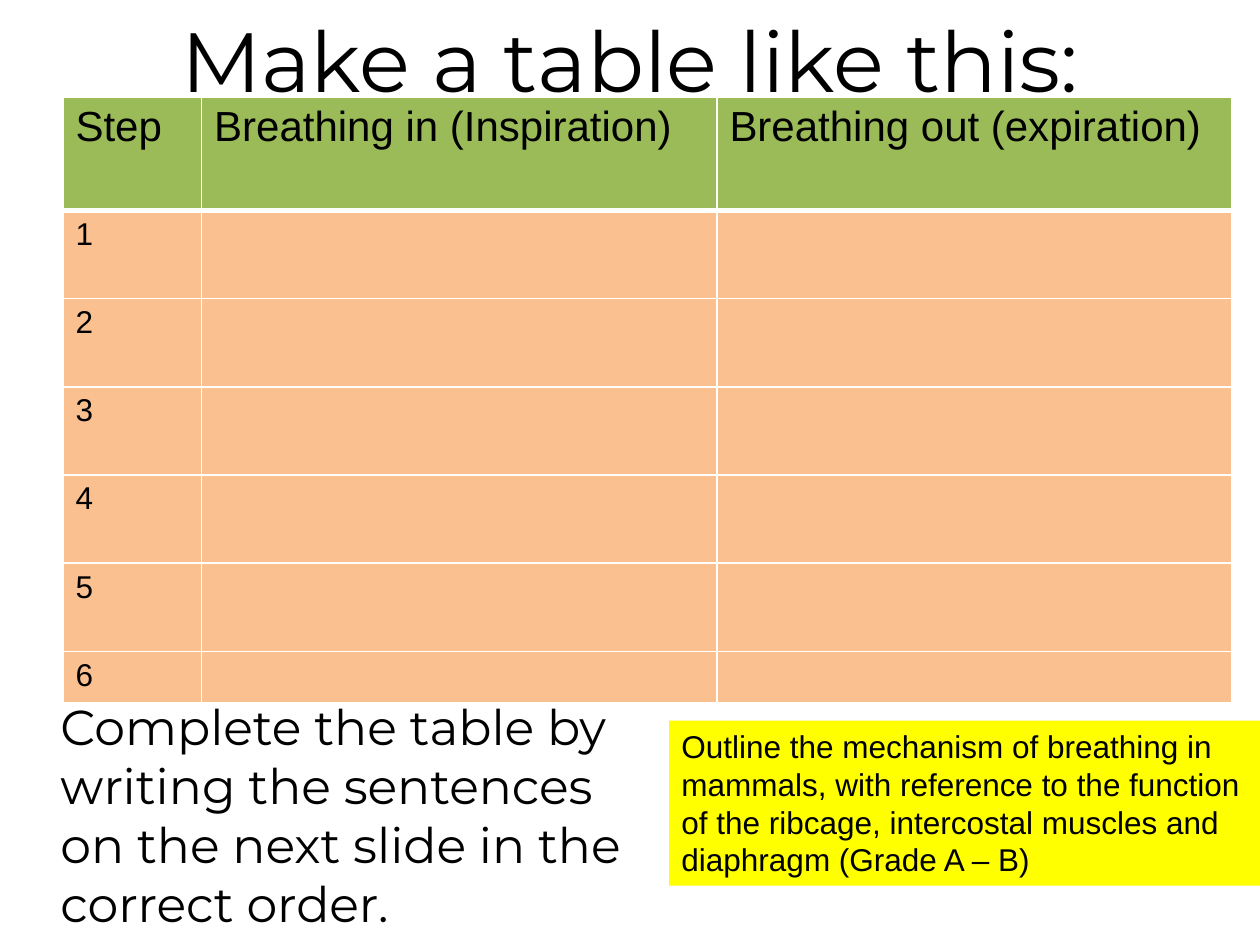
from lxml import etree
from pptx import Presentation
from pptx import util as u
from pptx.dml.color import RGBColor
from pptx.enum import shapes, text
from pptx.oxml import ns

BLACK = RGBColor(0x00, 0x00, 0x00)
WHITE = RGBColor(0xFF, 0xFF, 0xFF)
GREEN = RGBColor(0x9B, 0xBB, 0x59)
PEACH = RGBColor(0xFA, 0xC0, 0x90)
YELLOW = RGBColor(0xFF, 0xFF, 0x00)


class Worksheet:
    """Builds a classroom slide in one consistent style."""

    display_font = "Montserrat"
    body_font = "Arial"

    def __init__(self, deck):
        self.slide = deck.slides.add_slide(deck.slide_layouts[6])

    def set_text(self, frame, words, size, font):
        frame.word_wrap = True
        para = frame.paragraphs[0]
        para.text = words
        para.font.size = u.Pt(size)
        para.font.name = font
        para.font.bold = False
        para.font.color.rgb = BLACK
        return para

    def text_box(self, place, words, size):
        box = self.slide.shapes.add_textbox(*map(u.Inches, place))
        return box.text_frame, self.set_text(box.text_frame, words, size, self.display_font)

    def title(self, place, words):
        frame, para = self.text_box(place, words, 48)
        frame.vertical_anchor = text.MSO_ANCHOR.MIDDLE
        para.alignment = text.PP_ALIGN.CENTER

    def instruction(self, place, words):
        frame, para = self.text_box(place, words, 28)
        frame.margin_left = u.Inches(0.48)
        para.space_before = u.Pt(5.6)

    def note(self, place, words):
        box = self.slide.shapes.add_shape(shapes.MSO_SHAPE.RECTANGLE, *map(u.Inches, place))
        box.shadow.inherit = False
        box.fill.solid()
        box.fill.fore_color.rgb = YELLOW
        box.line.fill.background()
        box.text_frame.vertical_anchor = text.MSO_ANCHOR.TOP
        para = self.set_text(box.text_frame, words, 18, self.body_font)
        para.alignment = text.PP_ALIGN.LEFT

    def border(self, cell, side, width):
        properties = cell._tc.get_or_add_tcPr()
        line = etree.SubElement(properties, ns.qn(f"a:ln{side}"), w=str(u.Pt(width)))
        fill = etree.SubElement(line, ns.qn("a:solidFill"))
        etree.SubElement(fill, ns.qn("a:srgbClr"), val=str(WHITE))

    def table(self, place, widths, heights, rows):
        frame = self.slide.shapes.add_table(len(rows), len(widths), *map(u.Inches, place))
        table = frame.table
        table.horz_banding = False
        for column, width in zip(table.columns, widths):
            column.width = u.Inches(width)
        for index, (row, height, words) in enumerate(zip(table.rows, heights, rows)):
            row.height = u.Inches(height)
            header = index == 0
            for cell, label in zip(row.cells, words):
                for side in "LRTB":
                    self.border(cell, side, 3 if header and side == "B" else 1)
                cell.fill.solid()
                cell.fill.fore_color.rgb = GREEN if header else PEACH
                self.set_text(cell.text_frame, label, 24 if header else 18, self.body_font)


def main():
    deck = Presentation()
    deck.slide_width = u.Inches(10)
    deck.slide_height = u.Inches(7.5)
    page = Worksheet(deck)
    page.title((0.5, -0.16, 9, 1.25), "Make a table like this:")
    page.instruction(
        (0, 5.48, 5.32, 1.82),
        "Complete the table by writing the sentences on the next slide in the correct order.",
    )
    headings = ("Step", "Breathing in (Inspiration)", "Breathing out (expiration)")
    steps = [(str(step), "", "") for step in range(1, 7)]
    page.table(
        (0.5, 0.77, 9.28, 4.81),
        widths=(1.1, 4.09, 4.09),
        heights=[0.9] + [0.7] * 5 + [0.41],
        rows=[headings] + steps,
    )
    page.note(
        (5.31, 5.72, 4.69, 1.31),
        "Outline the mechanism of breathing in mammals, with reference to the function "
        "of the ribcage, intercostal muscles and diaphragm (Grade A – B)",
    )
    deck.save("out.pptx")


if __name__ == "__main__":
    main()
